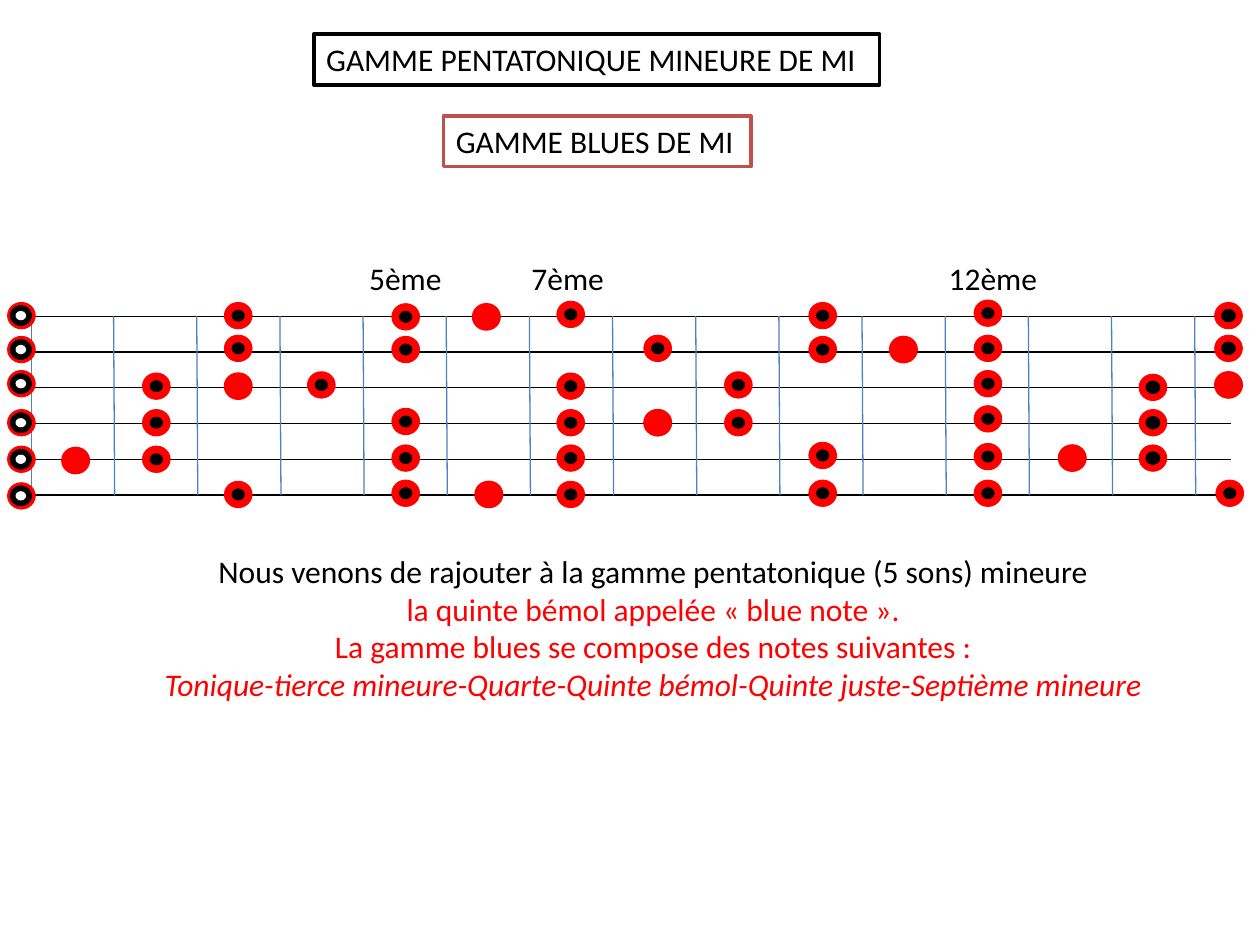
from dataclasses import dataclass

from pptx import Presentation
from pptx.dml.color import RGBColor
from pptx.enum.shapes import MSO_CONNECTOR, MSO_SHAPE
from pptx.enum.text import MSO_ANCHOR, MSO_AUTO_SIZE, PP_ALIGN
from pptx.oxml.ns import qn
from pptx.util import Pt
from lxml import etree

STRAIGHT = MSO_CONNECTOR.STRAIGHT
ELLIPSE, DONUT, RECTANGLE = MSO_SHAPE.OVAL, MSO_SHAPE.DONUT, MSO_SHAPE.RECTANGLE
LEFT, CENTER = PP_ALIGN.LEFT, PP_ALIGN.CENTER
TOP = MSO_ANCHOR.TOP
GROW = MSO_AUTO_SIZE.SHAPE_TO_FIT_TEXT


@dataclass(frozen=True)
class Theme:
    black: str = "000000"
    white: str = "FFFFFF"
    red: str = "FF0000"
    fret: str = "4F81BD"
    accent: str = "C0504D"
    font: str = "Calibri"
    text_size: float = 18
    hairline: float = 0.25
    ring: float = 0.5
    thin: float = 0.75
    frame: float = 2


class SlideBuilder:
    def __init__(self, slide, theme):
        self.slide = slide
        self.theme = theme

    def line(self, start, end, color):
        connector = self.slide.shapes.add_connector(
            STRAIGHT, *(Pt(value) for value in (*start, *end)))
        connector.line.color.rgb = RGBColor.from_string(color)
        connector.line.width = Pt(self.theme.thin)
        etree.SubElement(connector._element.spPr, qn("a:effectLst"))

    def shape(self, kind, box, fill, outline, width, thickness=None):
        shape = self.slide.shapes.add_shape(kind, *(Pt(value) for value in box))
        shape.shadow.inherit = False
        shape.fill.solid()
        shape.fill.fore_color.rgb = RGBColor.from_string(fill)
        shape.line.color.rgb = RGBColor.from_string(outline)
        shape.line.width = Pt(width)
        if thickness is not None:
            shape.adjustments[0] = thickness
        return shape

    def fill_text(self, shape, paragraphs, alignment=LEFT, wrap=False):
        frame = shape.text_frame
        frame_format = {"word_wrap": wrap, "auto_size": GROW, "vertical_anchor": TOP}
        for name, value in frame_format.items():
            setattr(frame, name, value)
        for index, (text, color, italic) in enumerate(paragraphs):
            paragraph = frame.add_paragraph() if index else frame.paragraphs[0]
            paragraph.alignment = alignment
            run = paragraph.add_run()
            run.text = text
            font_format = {"name": self.theme.font, "size": Pt(self.theme.text_size),
                           "italic": italic}
            for name, value in font_format.items():
                setattr(run.font, name, value)
            run.font.color.rgb = RGBColor.from_string(color)

    def label(self, box, paragraphs, alignment=LEFT, wrap=False):
        text_box = self.slide.shapes.add_textbox(*(Pt(value) for value in box))
        self.fill_text(text_box, paragraphs, alignment, wrap)

    def title(self, box, text, outline):
        shape = self.shape(RECTANGLE, box, self.theme.white, outline, self.theme.frame)
        self.fill_text(shape, [(text, self.theme.black, False)])


# Fretboard geometry
BOARD_LEFT, BOARD_RIGHT, BOARD_TOP = 18, 703.4, 180.7
STRING_COUNT, STRING_GAP = 6, 20.45
FRET_COUNT, FRET_GAP, FRET_LEAN = 15, 47.52, 0.6
BOARD_BOTTOM = BOARD_TOP + (STRING_COUNT - 1) * STRING_GAP

# Note markers
RING_SIZE = (15.84, 15.12)
DOT_SIZE, DOT_OFFSET = (12.96, 11.52), (1.4, 1.8)
OPEN_SIZE, OPEN_OFFSET = (12.24, 11.52), (1.5, 1.8)
WIDE, NARROW = 0.25, 0.22

OPEN_LEFT = 4.3
OPEN_TOPS = [172.8, 192.2, 211.7, 234, 254.9, 275.8]

# Pentatonic notes: left edge, ring thickness, top edges
PENTATONIC_COLUMNS = [
    (81.4, WIDE, [213.1, 234, 254.9]),
    (128.2, WIDE, [172.8, 191.5, 275]),
    (175.7, WIDE, [212.4]),
    (223.9, WIDE, [173.5, 192.2, 233.3, 254.2, 274.3]),
    (318.2, WIDE, [172.1, 213.1, 234, 254.2, 275]),
    (367.9, WIDE, [191.5]),
    (414, WIDE, [212.4, 234]),
    (462.2, WIDE, [172.8, 192.2, 252.7, 274.3]),
    (556.6, WIDE, [171.4, 191.5, 211.7, 231.8, 253.4, 274.3]),
    (650.9, NARROW, [213.8, 234, 254.2]),
    (694.1, NARROW, [172.8, 191.5]),
    (694.8, WIDE, [274.3]),
]
BLUE_NOTES = [
    (128.2, 213.1), (35.3, 255.6), (270, 173.5), (271.4, 275),
    (367.9, 234), (604.8, 254.2), (694.1, 212.4), (508.3, 192.2),
]
FRET_LABELS = [("5ème", 203.8, 56.2), ("7ème", 296.6, 56.2), ("12ème", 535, 65.5)]


def main():
    presentation = Presentation()
    presentation.slide_width, presentation.slide_height = Pt(720), Pt(540)
    slide = presentation.slides.add_slide(presentation.slide_layouts[6])
    theme = Theme()
    builder = SlideBuilder(slide, theme)

    # Strings and frets
    for string in range(STRING_COUNT):
        y = BOARD_TOP + string * STRING_GAP
        builder.line((BOARD_LEFT, y), (BOARD_RIGHT, y), theme.black)
    for fret in range(FRET_COUNT):
        x = BOARD_LEFT + fret * FRET_GAP
        lean = FRET_LEAN if fret else 0
        builder.line((x, BOARD_BOTTOM), (x - lean, BOARD_TOP), theme.fret)

    # Black centres of the pentatonic notes
    notes = [(left, top, thickness) for left, thickness, tops in PENTATONIC_COLUMNS
             for top in tops]
    for left, top, _ in notes:
        builder.shape(ELLIPSE, (left + DOT_OFFSET[0], top + DOT_OFFSET[1], *DOT_SIZE),
                      theme.black, theme.black, theme.thin)

    # Titles and fret numbers
    builder.title((179.3, 19.4, 323.3, 29.1), "GAMME PENTATONIQUE MINEURE DE MI",
                  theme.black)
    builder.title((253.4, 66.2, 175.7, 29.1), "GAMME BLUES DE MI", theme.accent)
    for text, left, width in FRET_LABELS:
        builder.label((left, 144.7, width, 29.1), [(text, theme.black, False)])

    # Red rings, blue notes and open strings
    open_notes = [(OPEN_LEFT, top, WIDE) for top in OPEN_TOPS]
    for left, top, thickness in open_notes + notes:
        builder.shape(DONUT, (left, top, *RING_SIZE), theme.red, theme.red,
                      theme.ring, thickness)
    for left, top in BLUE_NOTES:
        builder.shape(ELLIPSE, (left, top, *RING_SIZE), theme.red, theme.red, theme.thin)
    for left, top, thickness in open_notes:
        builder.shape(DONUT, (left + OPEN_OFFSET[0], top + OPEN_OFFSET[1], *OPEN_SIZE),
                      theme.black, theme.black, theme.hairline, thickness)

    # Explanation
    builder.label((76.3, 311.8, 594, 94.3), [
        ("Nous venons de rajouter à la gamme pentatonique (5 sons) mineure",
         theme.black, False),
        ("la quinte bémol appelée « blue note ».", theme.red, False),
        ("La gamme blues se compose des notes suivantes :", theme.red, False),
        ("Tonique-tierce mineure-Quarte-Quinte bémol-Quinte juste-Septième mineure",
         theme.red, True),
    ], CENTER, wrap=True)

    presentation.save("out.pptx")


if __name__ == "__main__":
    main()
